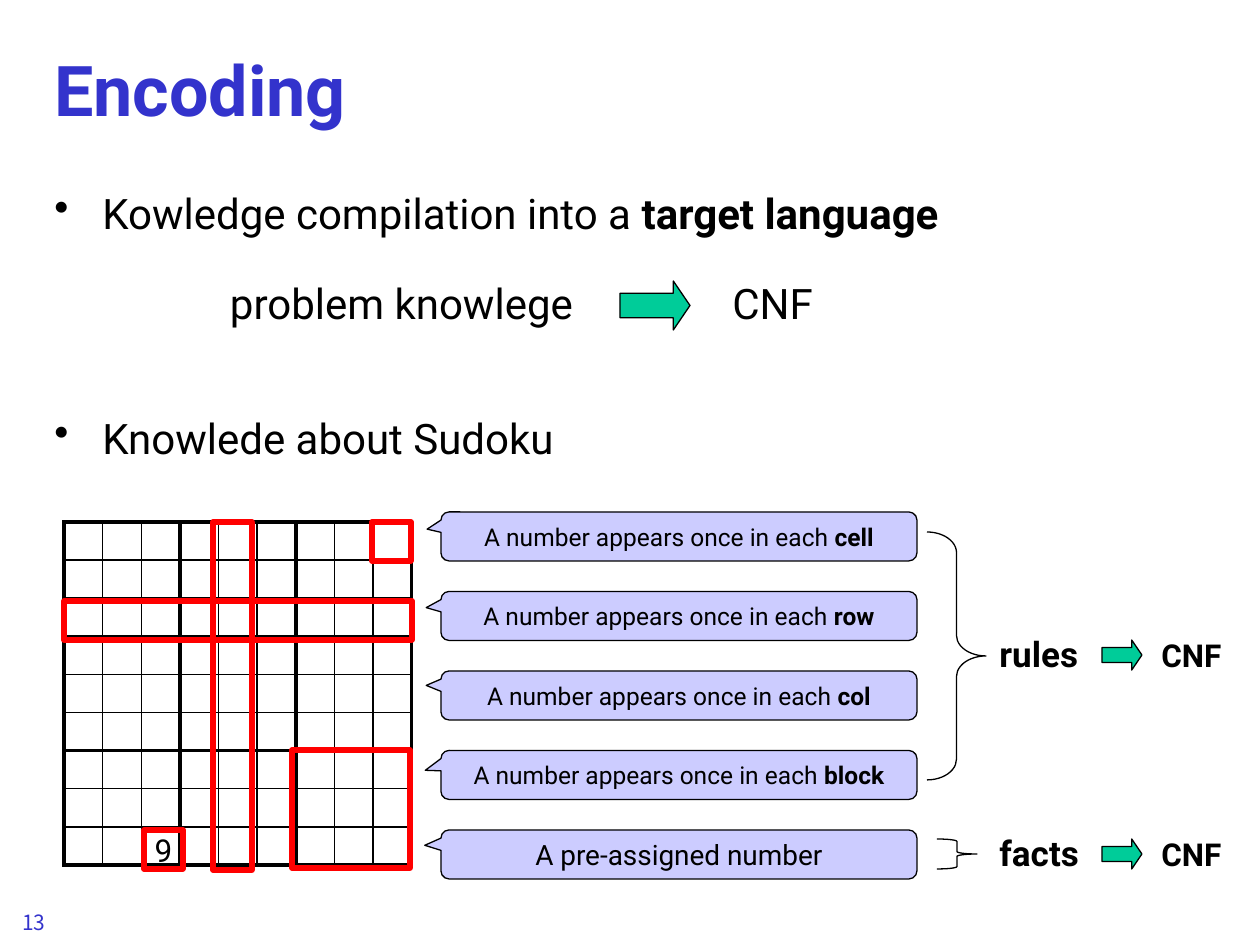
import pptx
import pptx.dml.color
import pptx.enum.shapes
import pptx.enum.text
import pptx.oxml
import pptx.oxml.ns
import pptx.util

EMU_PER_PX = 914400 / 126
FONT = "Roboto"
COLORS = {"title": "3333CC", "text": "000000", "line": "000000", "callout": "CCCCFF",
          "arrow": "00CC99", "mark": "FF0000", "cell": "FFFFFF"}
SHAPE = pptx.enum.shapes.MSO_SHAPE
ALIGN = pptx.enum.text.PP_ALIGN
ANCHOR = pptx.enum.text.MSO_ANCHOR
A_NS = pptx.oxml.ns.nsdecls("a")


def px(n):
    return pptx.util.Emu(round(n * EMU_PER_PX))


def rgb(name):
    return pptx.dml.color.RGBColor.from_string(COLORS[name])


def write(p, text, size, color="text", font=FONT, bold=False, align=ALIGN.LEFT):
    """Fill a paragraph; stretches between asterisks are bold."""
    p.alignment = align
    for i, part in enumerate(text.split("*")):
        if part:
            r = p.add_run()
            r.text = part
            r.font.size = pptx.util.Pt(size)
            r.font.name = font
            r.font.bold = bold or i % 2 == 1
            r.font.color.rgb = rgb(color)


def add_text(s, box, text, size, anchor=ANCHOR.TOP, wrap=True, **style):
    tf = s.shapes.add_textbox(*map(px, box)).text_frame
    tf.word_wrap = wrap
    tf.vertical_anchor = anchor
    write(tf.paragraphs[0], text, size, **style)
    return tf


def add_shape(s, kind, box, fill=None, line="line", width=0.75, adj=()):
    sp = s.shapes.add_shape(kind, *map(px, box))
    sp.shadow.inherit = False
    if fill:
        sp.fill.solid()
        sp.fill.fore_color.rgb = rgb(fill)
    else:
        sp.fill.background()
    sp.line.color.rgb = rgb(line)
    sp.line.width = pptx.util.Pt(width)
    for i, value in enumerate(adj):
        sp.adjustments[i] = value
    return sp


def add_arrow(s, box):
    add_shape(s, SHAPE.RIGHT_ARROW, box, fill="arrow", adj=(0.5, 0.34))


def set_bullet(p, indent):
    pPr = p._p.get_or_add_pPr()
    pPr.set("marL", str(px(indent)))
    pPr.set("indent", str(-px(indent)))
    pPr.append(pptx.oxml.parse_xml(f'<a:buChar {A_NS} char="•"/>'))


def set_border(cell, side, points):
    cell._tc.get_or_add_tcPr().append(pptx.oxml.parse_xml(
        f'<a:{side} {A_NS} w="{pptx.util.Pt(points)}"><a:solidFill>'
        f'<a:srgbClr val="{COLORS["line"]}"/></a:solidFill></a:{side}>'))


def bullets(s, x, y, w, h):
    tf = add_text(s, (x, y, w, h), "Kowledge compilation into a *target language*", 24)
    p = tf.add_paragraph()
    write(p, "Knowlede about Sudoku", 24)
    p.space_before = pptx.util.Pt(100)
    for p in tf.paragraphs:
        set_bullet(p, 48)


def compilation(s, x, y):
    add_text(s, (x, y, 397, 63), "problem knowlege", 24, align=ALIGN.CENTER)
    add_arrow(s, (x + 417, y + 10, 70, 49))
    add_text(s, (x + 517, y, 129, 63), "CNF", 24)


def sudoku_grid(s, x, y, w, h, n=9, block=3):
    """Empty board with thick lines around each block."""
    table = s.shapes.add_table(n, n, px(x), px(y), px(w), px(h)).table
    table.first_row = table.horz_banding = False
    for i in range(n):
        table.columns[i].width = px(w / n)
        table.rows[i].height = px(h / n)
    for row in range(n):
        for col in range(n):
            cell = table.cell(row, col)
            cell.margin_left = cell.margin_right = cell.margin_top = cell.margin_bottom = 0
            cell.text_frame.paragraphs[0]._p.append(
                pptx.oxml.parse_xml(f'<a:endParaRPr {A_NS} sz="800"/>'))
            edges = {"lnL": col, "lnR": col + 1, "lnT": row, "lnB": row + 1}
            for side, edge in edges.items():
                set_border(cell, side, 1 if edge % block else 2.25)
            cell.fill.solid()
            cell.fill.fore_color.rgb = rgb("cell")


def grid_marks(s, x, y):
    """Red frames for cell, row, column, block and given number."""
    frames = [(308, 0, 39, 39), (0, 79, 348, 39), (149, 0, 39, 348),
              (228, 228, 118, 118), (80, 308, 39, 39)]
    for dx, dy, w, h in frames:
        sp = add_shape(s, SHAPE.RECTANGLE, (x + dx, y + dy, w, h), line="mark", width=3)
    tf = sp.text_frame
    tf.word_wrap = False
    tf.vertical_anchor = ANCHOR.MIDDLE
    write(tf.paragraphs[0], "9", 18, align=ALIGN.CENTER)


def callouts(s, x, y, w, h):
    once = "A number appears once in each "
    items = [(once + "*cell*", 14, -0.529, -0.148), (once + "*row*", 14, -0.531, -0.17),
             (once + "*col*", 14, -0.531, -0.205), (once + "*block*", 14, -0.533, -0.095),
             ("A pre-assigned number", 16, -0.534, -0.187)]
    height = 49
    pitch = (h - height) / (len(items) - 1)
    for i, (text, size, tip_x, tip_y) in enumerate(items):
        sp = add_shape(s, SHAPE.ROUNDED_RECTANGULAR_CALLOUT, (x, y + i * pitch, w, height),
                       fill="callout", adj=(tip_x, tip_y, 0.167))
        tf = sp.text_frame
        tf.word_wrap = True
        tf.vertical_anchor = ANCHOR.MIDDLE
        write(tf.paragraphs[0], text, size, align=ALIGN.CENTER)


def conclusion(s, x, y, label, brace, curl):
    add_shape(s, SHAPE.RIGHT_BRACE, brace, adj=(curl, 0.5))
    add_text(s, (x, y, 118, 54), label, 20, bold=True)
    add_arrow(s, (x + 115, y + 14, 40, 30))
    add_text(s, (x + 160, y + 4, 89, 50), "CNF", 18, wrap=False, bold=True,
             align=ALIGN.CENTER)


def main():
    prs = pptx.Presentation()
    prs.slide_width, prs.slide_height = px(1260), px(945)
    s = prs.slides.add_slide(prs.slide_layouts[6])
    add_text(s, (10, 903, 262, 42), "13", 12, color="title", font="Noto Sans CJK KR")
    add_text(s, (42, 21, 1197, 136), "Encoding", 40, anchor=ANCHOR.MIDDLE,
             color="title", bold=True)
    bullets(s, 42, 181, 1197, 701)
    compilation(s, 203, 271)
    sudoku_grid(s, 64, 522, 348, 343)
    grid_marks(s, 64, 522)
    callouts(s, 441, 512, 476, 367)
    conclusion(s, 987, 626, "rules", (927, 532, 59, 248), 0.35)
    conclusion(s, 987, 825, "facts", (937, 839, 40, 30), 0.08)
    prs.save("out.pptx")


if __name__ == "__main__":
    main()
